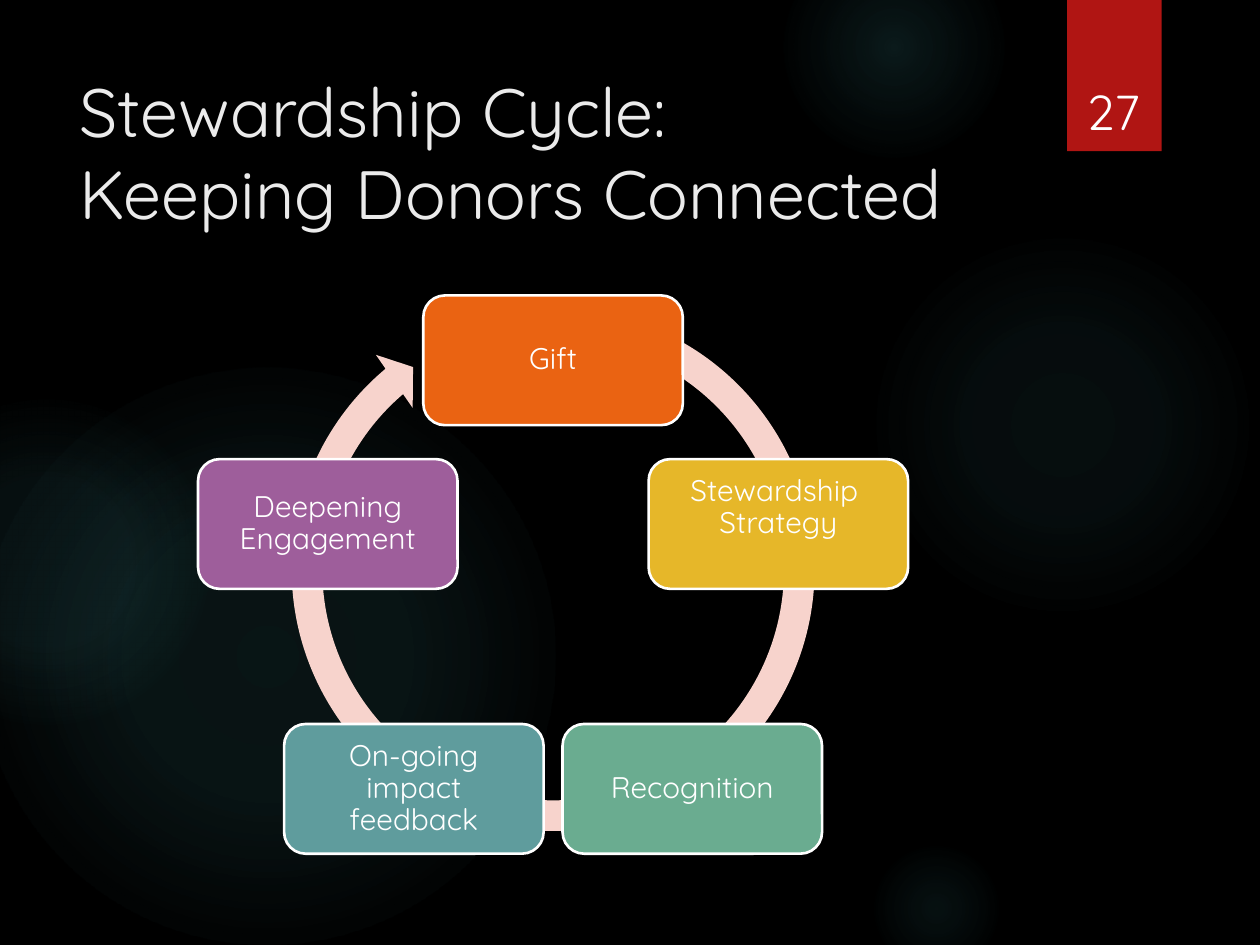
from math import cos, radians, sin

from pptx import Presentation
from pptx.dml.color import RGBColor
from pptx.enum.shapes import MSO_SHAPE as Shape
from pptx.enum.text import MSO_ANCHOR as Anchor, MSO_AUTO_SIZE as AutoSize, PP_ALIGN as Align
from pptx.oxml import parse_xml
from pptx.oxml.ns import nsdecls, qn
from pptx.util import Inches, Pt

BLACK = RGBColor(0x00, 0x00, 0x00)
WHITE = RGBColor(0xFF, 0xFF, 0xFF)
TITLE_GRAY = RGBColor(0xEB, 0xEB, 0xEB)
GLOW = RGBColor(0x50, 0xB9, 0xC1)
RED = RGBColor(0xB0, 0x15, 0x13)
PINK = RGBColor(0xF7, 0xD3, 0xCC)
ORANGE = RGBColor(0xEA, 0x63, 0x12)
YELLOW = RGBColor(0xE6, 0xB7, 0x29)
GREEN = RGBColor(0x6A, 0xAC, 0x90)
TEAL = RGBColor(0x5F, 0x9C, 0x9D)
PURPLE = RGBColor(0x9E, 0x5E, 0x9B)

GLOWS = [
    (6.89, 1.83, 3.08, [(0, 7), (36, 6), (69, 0)]),
    (6.22, -0.5, 1.75, [(0, 14), (36, 7), (73, 0)]),
    (6.89, 6.67, 1.08, [(0, 9), (36, 5), (66, 0)]),
    (-0.17, 2.92, 4.58, [(0, 11), (36, 10), (75, 0)]),
    (-0.92, 3.17, 2.58, [(0, 8), (36, 8), (72, 0)]),
]
STAGES = [
    ("Gift", ORANGE, 0.07),
    ("Stewardship \nStrategy", YELLOW, 0.32),
    ("Recognition", GREEN, 0.07),
    ("On-going impact feedback", TEAL, 0.07),
    ("Deepening Engagement", PURPLE, 0.07),
]
CENTER_X, CENTER_Y, RADIUS = 4.39, 4.74, 1.88
STAGE_WIDTH, STAGE_HEIGHT = 2.06, 1.03


class CycleSlide:
    """Holds the style and the current slide, and draws each kind of element."""

    def __init__(self, slide, font="Quicksand"):
        self.slide = slide
        self.font = font
        slide.background.fill.solid()
        slide.background.fill.fore_color.rgb = BLACK

    def set_text(self, frame, text, size, color, align, anchor):
        frame.text = text
        frame.word_wrap = True
        frame.auto_size = AutoSize.NONE
        frame.vertical_anchor = anchor
        for paragraph in frame.paragraphs:
            paragraph.alignment = align
            for run in paragraph.runs:
                run.font.name = self.font
                run.font.size = Pt(size)
                run.font.color.rgb = color

    def shape(self, kind, left, top, width, height, color):
        shape = self.slide.shapes.add_shape(
            kind, Inches(left), Inches(top), Inches(width), Inches(height))
        shape.shadow.inherit = False
        shape.fill.solid()
        shape.fill.fore_color.rgb = color
        shape.line.fill.background()
        return shape

    def glow(self, left, top, size, stops):
        circle = self.shape(Shape.OVAL, left, top, size, size, GLOW)
        stop_xml = "".join(
            f'<a:gs pos="{pos * 1000}"><a:srgbClr val="{GLOW}">'
            f'<a:alpha val="{alpha * 1000}"/></a:srgbClr></a:gs>'
            for pos, alpha in stops)
        gradient = parse_xml(
            f'<a:gradFill {nsdecls("a")}><a:gsLst>{stop_xml}</a:gsLst><a:path path="circle">'
            '<a:fillToRect l="50000" t="50000" r="50000" b="50000"/></a:path></a:gradFill>')
        properties = circle._element.spPr
        properties.replace(properties.find(qn("a:solidFill")), gradient)

    def title(self, text):
        title = self.slide.shapes.title
        title.left, title.top = Inches(0.53), Inches(0.5)
        title.width, title.height = Inches(7.71), Inches(1.53)
        self.set_text(title.text_frame, text, 39, TITLE_GRAY, Align.LEFT, Anchor.TOP)
        title.text_frame.paragraphs[0].line_spacing = 1.0

    def ring(self):
        size = 4.42
        arrow = self.shape(Shape.CIRCULAR_ARROW, CENTER_X - size / 2, 2.31, size, size, PINK)
        for index, value in enumerate((0.055, 3.307, 137.892, 173.779, 0.058)):
            arrow.adjustments[index] = value

    def stage(self, angle, text, color, bottom_inset):
        center_x = CENTER_X + RADIUS * sin(angle)
        center_y = CENTER_Y - RADIUS * cos(angle)
        box = self.shape(Shape.ROUNDED_RECTANGLE, center_x - STAGE_WIDTH / 2,
                         center_y - STAGE_HEIGHT / 2, STAGE_WIDTH, STAGE_HEIGHT, color)
        box.line.color.rgb = WHITE
        box.line.width = Pt(1.5)
        frame = box.text_frame
        frame.margin_left = frame.margin_right = frame.margin_top = Inches(0.07)
        frame.margin_bottom = Inches(bottom_inset)
        self.set_text(frame, text, 17, WHITE, Align.CENTER, Anchor.MIDDLE)
        for paragraph in frame.paragraphs:
            paragraph.line_spacing = 0.9

    def page_number(self, number):
        self.shape(Shape.RECTANGLE, 8.47, 0, 0.75, 1.2, RED)
        label = self.slide.shapes.add_textbox(
            Inches(8.49), Inches(0.32), Inches(0.69), Inches(0.84))
        self.set_text(label.text_frame, number, 28, WHITE, Align.CENTER, Anchor.BOTTOM)


def main():
    deck = Presentation()
    deck.slide_width, deck.slide_height = Inches(10), Inches(7.5)
    cycle = CycleSlide(deck.slides.add_slide(deck.slide_layouts[5]))
    for glow in GLOWS:
        cycle.glow(*glow)
    cycle.title("Stewardship Cycle: \vKeeping Donors Connected")
    cycle.ring()
    for index, stage in enumerate(STAGES):
        cycle.stage(radians(index * 360 / len(STAGES)), *stage)
    cycle.page_number("27")
    deck.save("out.pptx")


if __name__ == "__main__":
    main()
